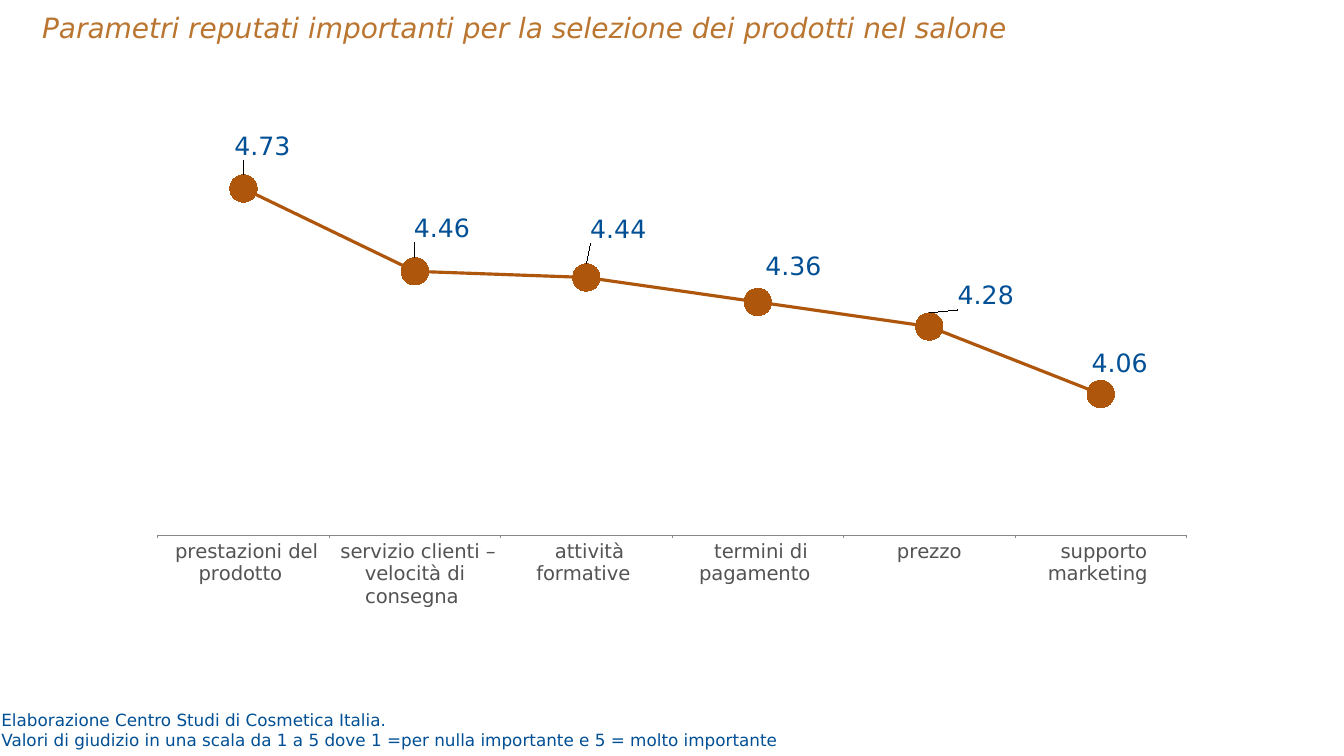
from dataclasses import dataclass

import pptx
import pptx.chart.data
import pptx.dml.color
import pptx.enum.chart
import pptx.enum.text
import pptx.oxml
import pptx.oxml.ns
import pptx.util
from pptx.util import Cm


@dataclass(frozen=True)
class Theme:
    font: str = "DejaVu Sans"
    title: str = "BA7530"
    accent: str = "AF560D"
    blue: str = "014F95"
    category: str = "535353"
    axis: str = "888888"
    title_size: int = 40
    value_size: int = 36
    category_size: int = 28
    note_size: int = 24


@dataclass(frozen=True)
class Box:
    left: float
    top: float
    width: float
    height: float

    def lengths(self) -> tuple:
        return Cm(self.left), Cm(self.top), Cm(self.width), Cm(self.height)


@dataclass(frozen=True)
class Parameter:
    label: str
    score: float
    shift_x: float
    shift_y: float


THEME = Theme()
TITLE_BOX = Box(1.52, 0.15, 58.52, 2.11)
NOTE_BOX = Box(-0.08, 35.59, 39.88, 2.34)
CHART_BOX = Box(4.7, 6.63, 61.29, 27.1)
PLOT_BOX = Box(3.25, 0.84, 51.85, 19.5)

PARAMETERS = [
    Parameter("prestazioni del prodotto", 4.73, 0.96, -0.6),
    Parameter("servizio clienti – velocità di consegna", 4.46, 1.36, -0.65),
    Parameter("attività formative", 4.44, 1.61, -0.9),
    Parameter("termini di pagamento", 4.36, 1.79, -0.25),
    Parameter("prezzo", 4.28, 2.85, -0.05),
    Parameter("supporto marketing", 4.06, 0.96, 0),
]


def rgb(color: str):
    return pptx.dml.color.RGBColor.from_string(color)


def style_font(font, size: int, color: str, italic: bool = False) -> None:
    font.name = THEME.font
    font.size = pptx.util.Pt(size)
    font.color.rgb = rgb(color)
    font.bold = False
    font.italic = italic


def fill_text(frame, lines: list[str], size: int, color: str,
              spacing: float = 1.0, indent: float = 0.15, italic: bool = False) -> None:
    frame.word_wrap = True
    frame.auto_size = pptx.enum.text.MSO_AUTO_SIZE.NONE
    frame.vertical_anchor = pptx.enum.text.MSO_ANCHOR.MIDDLE
    frame.margin_left = Cm(indent)
    frame.margin_right = frame.margin_top = frame.margin_bottom = Cm(0.15)
    frame.text = "\n".join(lines)
    for paragraph in frame.paragraphs:
        paragraph.alignment = pptx.enum.text.PP_ALIGN.LEFT
        paragraph.line_spacing = spacing
        style_font(paragraph.font, size, color, italic)


def manual_layout(**settings):
    values = "".join(f'<c:{tag} val="{value}"/>' for tag, value in settings.items())
    return pptx.oxml.parse_xml(
        f'<c:layout {pptx.oxml.ns.nsdecls("c")}>'
        f"<c:manualLayout>{values}</c:manualLayout></c:layout>"
    )


def place_plot(chart) -> None:
    plot_area = chart.plots[0]._element.getparent()
    for layout in plot_area.findall(pptx.oxml.ns.qn("c:layout")):
        plot_area.remove(layout)
    plot_area.insert(0, manual_layout(
        layoutTarget="inner", xMode="edge", yMode="edge",
        x=PLOT_BOX.left / CHART_BOX.width, y=PLOT_BOX.top / CHART_BOX.height,
        w=PLOT_BOX.width / CHART_BOX.width, h=PLOT_BOX.height / CHART_BOX.height,
    ))


def style_axes(chart) -> None:
    scores = chart.value_axis
    scores.minimum_scale, scores.maximum_scale = 3.6, 4.86
    scores.has_major_gridlines = False
    scores.visible = False
    categories = chart.category_axis
    categories.major_tick_mark = pptx.enum.chart.XL_TICK_MARK.OUTSIDE
    categories.format.line.color.rgb = rgb(THEME.axis)
    categories.format.line.width = pptx.util.Pt(0.75)
    style_font(categories.tick_labels.font, THEME.category_size, THEME.category)


def style_scores(series) -> None:
    series.smooth = False
    series.format.line.color.rgb = rgb(THEME.accent)
    series.format.line.width = pptx.util.Pt(4.5)
    series.marker.style = pptx.enum.chart.XL_MARKER_STYLE.CIRCLE
    series.marker.size = 39
    series.marker.format.fill.solid()
    series.marker.format.fill.fore_color.rgb = rgb(THEME.accent)
    series.marker.format.line.fill.background()
    labels = series.data_labels
    labels.show_value = True
    labels.number_format = "0.00"
    labels.number_format_is_linked = False
    labels.position = pptx.enum.chart.XL_LABEL_POSITION.ABOVE
    style_font(labels.font, THEME.value_size, THEME.blue)
    for index, parameter in enumerate(PARAMETERS):
        label = series.points[index].data_label
        label.position = pptx.enum.chart.XL_LABEL_POSITION.ABOVE
        style_font(label.font, THEME.value_size, THEME.blue)
    for entry, parameter in zip(series._element.xpath("c:dLbls/c:dLbl"), PARAMETERS):
        entry.insert(1, manual_layout(
            x=parameter.shift_x / CHART_BOX.width,
            y=parameter.shift_y / CHART_BOX.height,
        ))


def add_score_chart(slide) -> None:
    data = pptx.chart.data.CategoryChartData(number_format="0.00")
    data.categories = [f" {parameter.label} " for parameter in PARAMETERS]
    data.add_series("Series 1", [parameter.score for parameter in PARAMETERS])
    chart = slide.shapes.add_chart(
        pptx.enum.chart.XL_CHART_TYPE.LINE_MARKERS, *CHART_BOX.lengths(), data
    ).chart
    chart.has_legend = False
    chart.has_title = False
    style_font(chart.font, THEME.note_size, THEME.category)
    chart.plots[0].vary_by_categories = False
    place_plot(chart)
    style_axes(chart)
    style_scores(chart.plots[0].series[0])


def main() -> None:
    deck = pptx.Presentation()
    deck.slide_width, deck.slide_height = Cm(67.74), Cm(38.1)
    slide = deck.slides.add_slide(deck.slide_layouts[5])
    title = slide.shapes.title
    title.left, title.top, title.width, title.height = TITLE_BOX.lengths()
    fill_text(title.text_frame,
              ["Parametri reputati importanti per la selezione dei prodotti nel salone"],
              THEME.title_size, THEME.title, spacing=1.2, indent=0.6, italic=True)
    note = slide.shapes.add_textbox(*NOTE_BOX.lengths())
    fill_text(note.text_frame, [
        "Elaborazione Centro Studi di Cosmetica Italia.",
        "Valori di giudizio in una scala da 1 a 5 dove 1 =per nulla importante e 5 = molto importante",
    ], THEME.note_size, THEME.blue)
    add_score_chart(slide)
    deck.save("out.pptx")


if __name__ == "__main__":
    main()
